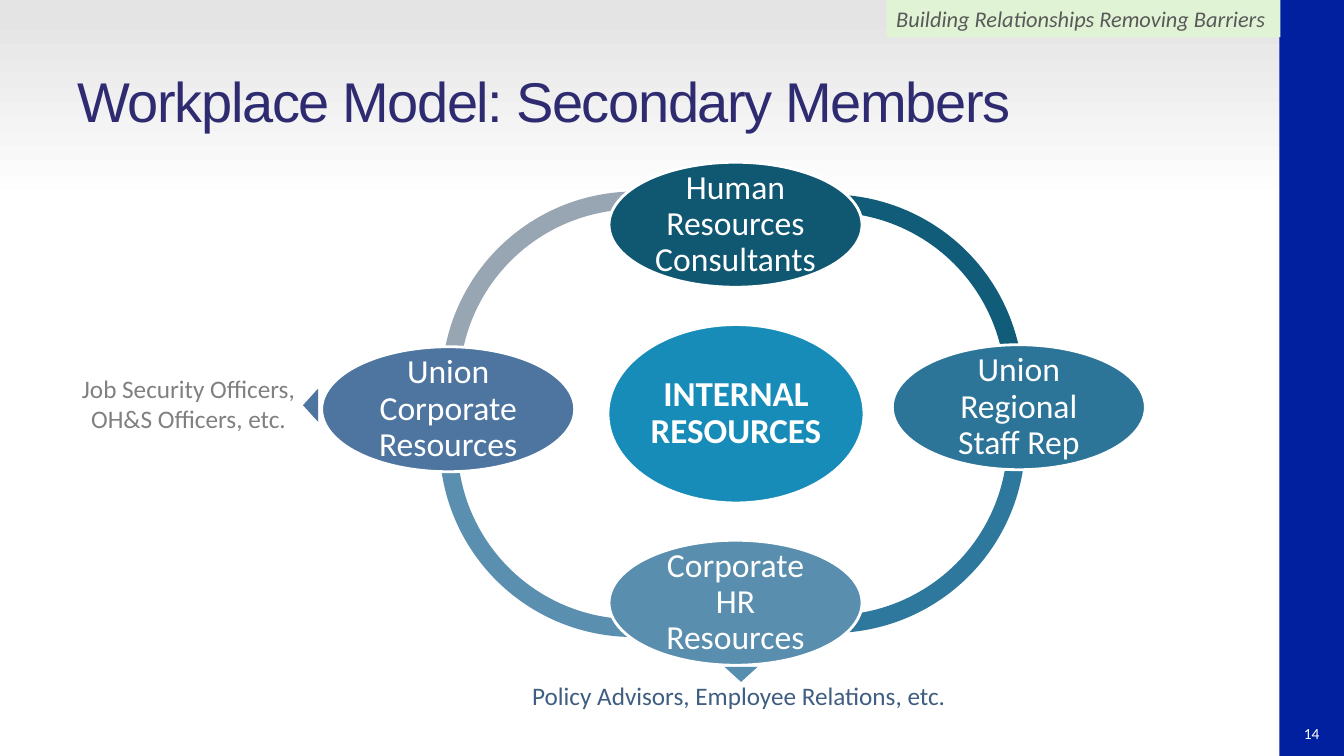
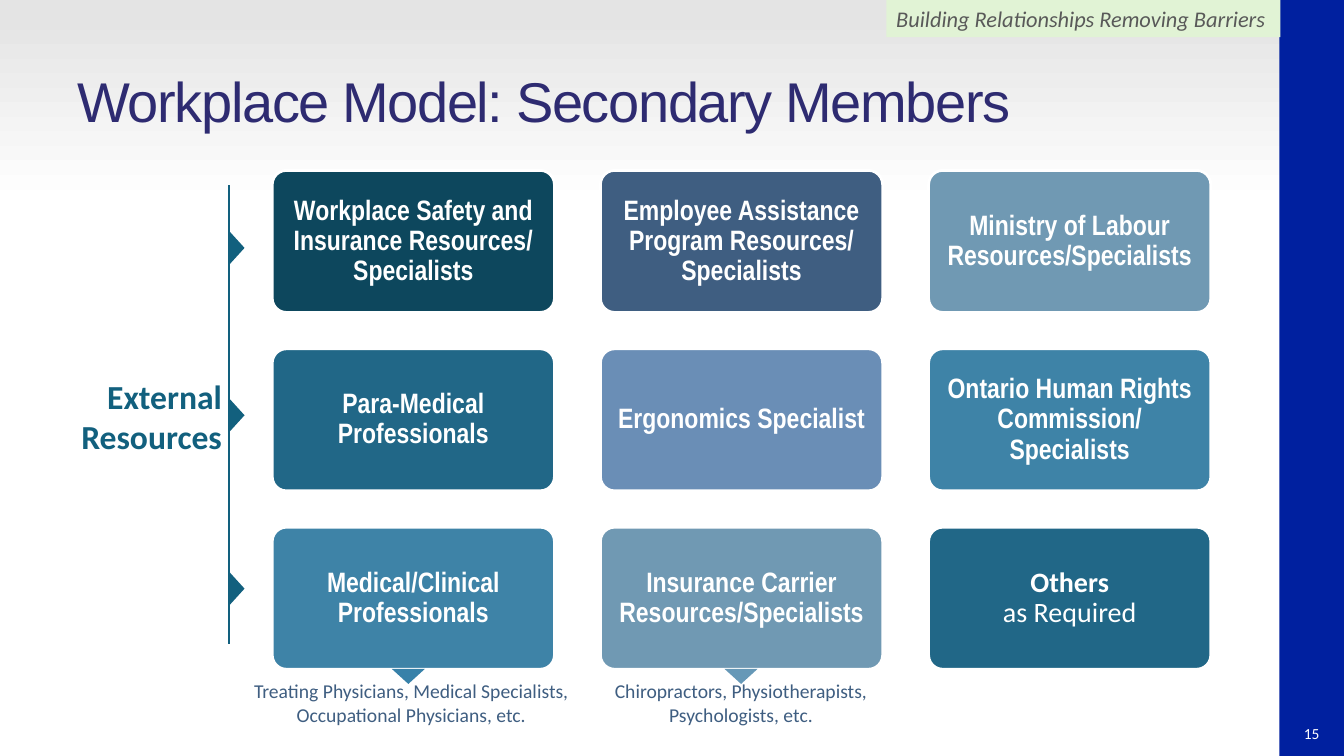
from dataclasses import dataclass

from lxml import etree
from pptx import Presentation
from pptx.dml.color import RGBColor
from pptx.enum import shapes, text
from pptx.oxml import ns
from pptx.util import Inches, Pt

SHAPE = shapes.MSO_SHAPE
ALIGN = text.PP_ALIGN
ANCHOR = text.MSO_ANCHOR


@dataclass(frozen=True)
class Theme:
    """Colours, fonts and type sizes of the deck."""
    white: str = "FFFFFF"
    backdrop: str = "E4E4E4"
    bar: str = "00209F"
    tag: str = "E1F3D5"
    tag_text: str = "595959"
    title: str = "2E2B71"
    note: str = "3F5E81"
    muted: str = "808080"
    hub: str = "188CB9"
    accent: str = "12607E"
    midnight: str = "0D475D"
    teal: str = "216787"
    ocean: str = "3E83A7"
    mist: str = "7099B3"
    navy: str = "3F5E81"
    periwinkle: str = "6A8EB6"
    body_font: str = "Calibri"
    card_font: str = "Arial Narrow"
    title_font: str = "Arial"
    title_size: int = 40
    hub_size: int = 25
    large: int = 24
    card_size: int = 20
    note_size: int = 18
    tag_size: int = 16
    small: int = 14
    number_size: int = 11


THEME = Theme()


@dataclass(frozen=True)
class Box:
    """A rectangle in inches."""
    left: float
    top: float
    width: float
    height: float

    def inner(self, left, top, width, height):
        """A box given relative to this one's top left corner."""
        return Box(self.left + left, self.top + top, width, height)

    def emu(self):
        return [Inches(n) for n in (self.left, self.top, self.width, self.height)]


def rgb(color):
    return RGBColor.from_string(color)


def write(shape, words, size, color, font=THEME.body_font, bold=False, italic=False,
          align=ALIGN.LEFT, anchor=ANCHOR.TOP, inset=None, spacing=None):
    """Set and format the text of a shape; a vertical tab breaks a line."""
    frame = shape.text_frame
    frame.text = words
    frame.word_wrap = True
    frame.vertical_anchor = anchor
    if inset is not None:
        frame.margin_left = frame.margin_right = Inches(inset)
        frame.margin_top = frame.margin_bottom = Inches(inset)
    for paragraph in frame.paragraphs:
        paragraph.alignment = align
        if spacing:
            paragraph.line_spacing = spacing
        for run in paragraph.runs:
            run.font.name = font
            run.font.size = Pt(size)
            run.font.bold = bold
            run.font.italic = italic
            run.font.color.rgb = rgb(color)
    return frame


def add_label(slide, box, words, size, color, **style):
    return write(slide.shapes.add_textbox(*box.emu()), words, size, color, **style)


def add_block(slide, kind, box, color, outlined=False):
    """Add a filled preset shape, with a white outline if asked."""
    block = slide.shapes.add_shape(kind, *box.emu())
    block.shadow.inherit = False
    block.fill.solid()
    block.fill.fore_color.rgb = rgb(color)
    if outlined:
        block.line.color.rgb = rgb(THEME.white)
        block.line.width = Pt(2)
    else:
        block.line.fill.background()
    return block


def add_pointer(slide, center_x, center_y, rotation, color):
    width, height = 0.33, 0.15
    box = Box(center_x - width / 2, center_y - height / 2, width, height)
    add_block(slide, SHAPE.ISOSCELES_TRIANGLE, box, color).rotation = rotation


def add_oval(slide, box, words, size, color, bold=False):
    oval = add_block(slide, SHAPE.OVAL, box, color, outlined=True)
    write(oval, words, size, THEME.white, bold=bold, align=ALIGN.CENTER,
          anchor=ANCHOR.MIDDLE, inset=0.03, spacing=0.9)


def paint_background(master):
    fill = master.background.fill
    fill.gradient()
    fill.gradient_angle = 90
    stops = ((0.73, THEME.white), (0.98, THEME.backdrop))
    for stop, (position, color) in zip(fill.gradient_stops, stops):
        stop.position = position
        stop.color.rgb = rgb(color)


def add_framed_slide(prs, title, number):
    """Add a slide with the side bar, tag line, page number and title."""
    slide = prs.slides.add_slide(prs.slide_layouts[6])
    bar = Box(12.69, 0, 0.64, 7.5)
    add_block(slide, SHAPE.RECTANGLE, bar, THEME.bar)
    tag = add_block(slide, SHAPE.RECTANGLE, Box(8.79, 0, 3.91, 0.37), THEME.tag)
    write(tag, "Building Relationships Removing Barriers", THEME.tag_size,
          THEME.tag_text, italic=True, anchor=ANCHOR.MIDDLE)
    add_label(slide, bar.inner(0.09, 7.15, 0.46, 0.25), str(number), THEME.number_size,
              THEME.white, align=ALIGN.CENTER, anchor=ANCHOR.MIDDLE, inset=0)
    heading = add_label(slide, Box(0.67, 0.37, 12.01, 1.25), title, THEME.title_size,
                        THEME.title, font=THEME.title_font, anchor=ANCHOR.MIDDLE)
    run_properties = heading.paragraphs[0].runs[0]._r.get_or_add_rPr()
    run_properties.set("spc", "-100")
    return slide


def add_resource_ring(slide, ring):
    """Draw the hub, the four arcs around it and the four outer ovals."""
    add_oval(slide, ring.inner(2.84, 1.61, 2.54, 1.77), "INTERNAL RESOURCES",
             THEME.hub_size, THEME.hub, bold=True)
    arcs = [  # left, top, start and end in degrees, colour
        (1.19, 0.29, 172.75, 302, "97A6B2"),
        (1.17, 0.87, 57.4, 190.56, "5A8FAF"),
        (3.14, 0.83, 350.1, 120.6, "2D789C"),
        (3.12, 0.32, 240.06, 5.78, "115C78"),
    ]
    for left, top, start, end, color in arcs:
        arc = add_block(slide, SHAPE.BLOCK_ARC, ring.inner(left, top, 3.84, 3.84), color)
        # The angle guides count 60000 to a degree, the adjustments 100000 to one
        arc.adjustments[0] = start * 0.6
        arc.adjustments[1] = end * 0.6
        arc.adjustments[2] = 0.046
    members = [
        (2.85, 0, "Human Resources\vConsultants", "105772"),
        (5.66, 1.81, "Union Regional Staff Rep", "2D7598"),
        (2.85, 3.75, "Corporate HR Resources", "598EAE"),
        (0, 1.83, "Union Corporate Resources", "4E75A0"),
    ]
    for left, top, words, color in members:
        add_oval(slide, ring.inner(left, top, 2.51, 1.24), words, THEME.large, color)


def add_ring_notes(slide, ring):
    add_label(slide, ring.inner(-2.93, 2.04, 3.22, 0.71),
              "Job Security Officers,\nOH&S Officers, etc.", THEME.note_size,
              THEME.muted, align=ALIGN.CENTER)
    add_pointer(slide, ring.left - 0.11, ring.top + 2.41, 270, "4E75A0")
    add_label(slide, ring.inner(1.99, 5.09, 4.4, 0.4),
              "Policy Advisors, Employee Relations, etc.", THEME.note_size, THEME.note)
    add_pointer(slide, ring.left + 4.16, ring.top + 5.08, 180, "568EAF")


def add_card_grid(slide, grid):
    """Spread three rows of three cards evenly over the box."""
    rows = [
        [("Workplace Safety and Insurance Resources/ Specialists", THEME.midnight),
         ("Employee Assistance Program Resources/ Specialists", THEME.navy),
         ("Ministry of Labour Resources/Specialists", THEME.mist)],
        [("Para-Medical Professionals", THEME.teal),
         ("Ergonomics Specialist", THEME.periwinkle),
         ("Ontario Human Rights Commission/ Specialists", THEME.ocean)],
        [("Medical/Clinical Professionals", THEME.ocean),
         ("Insurance Carrier Resources/Specialists", THEME.mist),
         ("Others\vas Required", THEME.teal)],
    ]
    width, height = 2.8, 1.41
    step_x = (grid.width - width) / 2
    step_y = (grid.height - height) / 2
    for row, cards in enumerate(rows):
        for column, (words, color) in enumerate(cards):
            box = grid.inner(column * step_x, row * step_y, width, height)
            card = add_block(slide, SHAPE.ROUNDED_RECTANGLE, box, color, outlined=True)
            card.adjustments[0] = 0.1
            others = words.startswith("Others")
            frame = write(card, words, THEME.card_size, THEME.white, bold=True,
                          font=THEME.body_font if others else THEME.card_font,
                          align=ALIGN.CENTER, anchor=ANCHOR.MIDDLE, inset=0.08,
                          spacing=0.9)
            if others:
                frame.paragraphs[0].runs[1].font.bold = False


def add_card_notes(slide, grid):
    notes = [  # left, width, words, pointer centre, pointer colour
        (-0.54, 3.84, "Treating Physicians, Medical Specialists,\v"
                      "Occupational Physicians, etc.", 1.35, "3781A9"),
        (2.97, 3.36, "Chiropractors, Physiotherapists,\vPsychologists, etc.",
         4.65, "6698B7"),
    ]
    for left, width, words, center, color in notes:
        add_label(slide, grid.inner(left, 5, width, 0.57), words, THEME.small,
                  THEME.note, align=ALIGN.CENTER)
        add_pointer(slide, grid.left + center, grid.top + 5.02, 180, color)


def add_side_heading(slide, side):
    """Write the row heading left of a rule that points at the cards."""
    rule_x = side.left + side.width
    rule = slide.shapes.add_connector(
        shapes.MSO_CONNECTOR.STRAIGHT, Inches(rule_x), Inches(side.top),
        Inches(rule_x), Inches(side.top + side.height))
    rule.line.color.rgb = rgb(THEME.accent)
    rule.line.width = Pt(1.5)
    etree.SubElement(rule._element.spPr, ns.qn("a:effectLst"))
    for offset in (0.62, 2.28, 4):
        add_pointer(slide, rule_x + 0.08, side.top + offset, 90, THEME.accent)
    add_label(slide, side.inner(0, 1.84, side.width + 0.03, 0.91),
              "External\nResources", THEME.large, THEME.accent, bold=True,
              align=ALIGN.RIGHT)


def main():
    prs = Presentation()
    prs.slide_width, prs.slide_height = Inches(13.33), Inches(7.5)
    paint_background(prs.slide_master)
    title = "Workplace Model: Secondary Members"

    internal = add_framed_slide(prs, title, 14)
    ring = Box(3.19, 1.61, 8.16, 4.99)
    add_resource_ring(internal, ring)
    add_ring_notes(internal, ring)

    external = add_framed_slide(prs, title, 15)
    grid = Box(2.7, 1.69, 9.31, 4.95)
    add_card_grid(external, grid)
    add_card_notes(external, grid)
    add_side_heading(external, Box(0.5, 1.84, 1.77, 4.55))

    prs.save("out.pptx")


if __name__ == "__main__":
    main()
